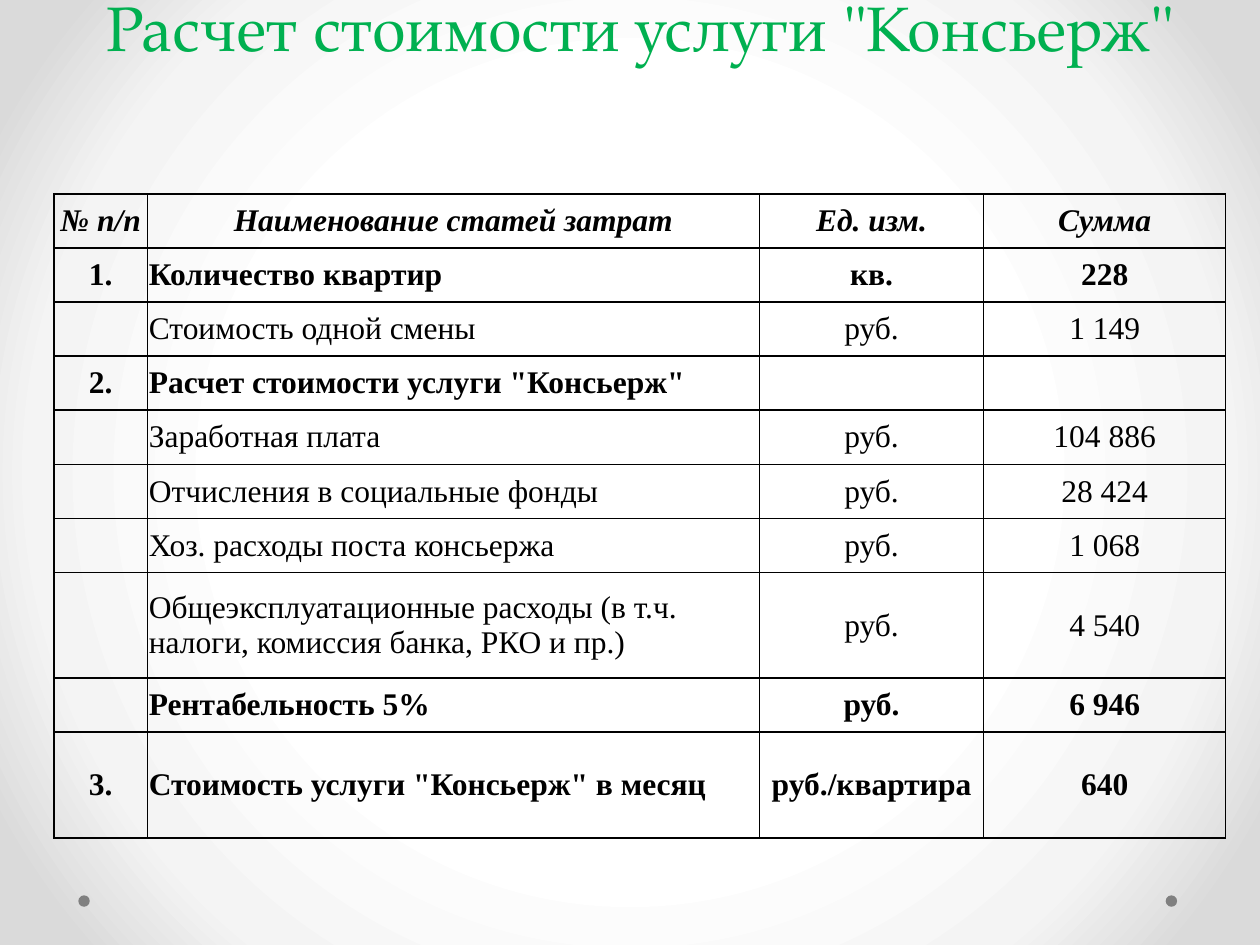
import pptx
import pptx.util
import pptx.oxml
import pptx.oxml.ns
import pptx.dml.color
import pptx.enum.text
import pptx.enum.shapes
import lxml.etree

Cm = pptx.util.Cm
Pt = pptx.util.Pt
qn = pptx.oxml.ns.qn
ALIGN = pptx.enum.text.PP_ALIGN
HUES = {"title": "00B050", "ink": "000000", "dot": "808080",
        "mid": "FFFFFF", "ring": "F4F4F4", "edge": "DADADA"}
PLAIN = "{2D5ABB26-0587-4C30-8999-92F81FD0307C}"
COLS = [1.88, 12.34, 4.52, 4.88]
LOW, TALL = 1.09, 2.13
COSTS = [
    ("№ п/п", "Наименование статей затрат", "Ед. изм.", "Сумма"),
    ("1.", "Количество квартир", "кв.", "228"),
    ("", "Стоимость одной смены", "руб.", "1 149"),
    ("2.", 'Расчет стоимости услуги "Консьерж"', "", ""),
    ("", "Заработная плата", "руб.", "104 886"),
    ("", "Отчисления в социальные фонды", "руб.", "28 424"),
    ("", "Хоз. расходы поста консьержа", "руб.", "1 068"),
    ("", "Общеэксплуатационные расходы (в т.ч. налоги, комиссия банка, РКО и пр.)",
     "руб.", "4 540"),
    ("", "Рентабельность 5%", "руб.", "6 946"),
    ("3.", 'Стоимость услуги "Консьерж" в месяц', "руб./квартира", "640"),
]
BOLD = {0, 1, 3, 8, 9}
HIGH = {7, 9}


def tint(name):
    """Return the named colour."""
    return pptx.dml.color.RGBColor.from_string(HUES[name])


def paint(slide):
    """Give the slide a round gradient background."""
    slide.background.fill.solid()
    prop = slide.element.find(".//" + qn("p:bgPr"))
    stops = "".join(
        f'<a:gs pos="{pos}000"><a:srgbClr val="{HUES[name]}"/></a:gs>'
        for pos, name in ((50, "mid"), (76, "ring"), (92, "edge")))
    grad = pptx.oxml.parse_xml(
        f'<a:gradFill {pptx.oxml.ns.nsdecls("a")} rotWithShape="1">'
        f'<a:gsLst>{stops}</a:gsLst><a:path path="circle">'
        '<a:fillToRect l="50000" t="50000" r="50000" b="50000"/>'
        '</a:path></a:gradFill>')
    prop.replace(prop.find(qn("a:solidFill")), grad)


def dots(slide, left, top, width, size):
    """Place a dot at each end of the box."""
    for x in (left, left + width - size):
        dot = slide.shapes.add_shape(pptx.enum.shapes.MSO_SHAPE.OVAL,
                                     Cm(x), Cm(top), Cm(size), Cm(size))
        dot.shadow.inherit = False
        dot.fill.solid()
        dot.fill.fore_color.rgb = tint("dot")
        dot.line.fill.background()


def table(slide, left, top, cols, rows):
    """Add an unstyled table with the given column and row sizes."""
    frame = slide.shapes.add_table(len(rows), len(cols), Cm(left), Cm(top),
                                   Cm(sum(cols)), Cm(sum(rows)))
    grid = frame.table
    grid.first_row = grid.horz_banding = False
    frame.element.find(".//" + qn("a:tableStyleId")).text = PLAIN
    for col, width in zip(grid.columns, cols):
        col.width = Cm(width)
    for row, height in zip(grid.rows, rows):
        row.height = Cm(height)
    return grid


def fill(cell, text, size, face, hue, sides, align=ALIGN.CENTER):
    """Write one clear cell and return its font."""
    cell.fill.background()
    cell.vertical_anchor = pptx.enum.text.MSO_ANCHOR.MIDDLE
    cell.margin_left = cell.margin_right = Cm(sides)
    cell.margin_top = cell.margin_bottom = 0
    para = cell.text_frame.paragraphs[0]
    para.text = text
    para.alignment = align
    font = para.runs[0].font if para.runs else para.font
    font.size, font.name = Pt(size), face
    font.color.rgb = tint(hue)
    return font


def edge(cell):
    """Draw a thin line on all four sides of the cell."""
    prop = cell._tc.get_or_add_tcPr()
    for spot, side in enumerate("LRTB"):
        line = lxml.etree.Element(qn("a:ln" + side), w=str(Pt(1)))
        solid = lxml.etree.SubElement(line, qn("a:solidFill"))
        lxml.etree.SubElement(solid, qn("a:srgbClr"), val=HUES["ink"])
        prop.insert(spot, line)


def title(slide, left, top, width):
    """Place the heading table."""
    grid = table(slide, left, top, [width], [0.66, 0.66])
    head = grid.cell(0, 0)
    fill(head, 'Расчет стоимости услуги "Консьерж"', 36,
         "TeX Gyre Pagella", "title", 0.18)
    head.text_frame.paragraphs[0].line_spacing = 0.73
    grid.cell(1, 0).fill.background()


def costs(slide, left, top):
    """Place the table of costs."""
    rows = [TALL if r in HIGH else LOW for r in range(len(COSTS))]
    grid = table(slide, left, top, COLS, rows)
    for r, row in enumerate(COSTS):
        for c, text in enumerate(row):
            cell = grid.cell(r, c)
            align = ALIGN.LEFT if c == 1 and r else ALIGN.CENTER
            font = fill(cell, text, 18, "Times New Roman", "ink", 0.03, align)
            font.bold = r in BOLD
            font.italic = r == 0
            edge(cell)


def main():
    """Build and save the slide."""
    deck = pptx.Presentation()
    deck.slide_width, deck.slide_height = Cm(25.4), Cm(19.05)
    slide = deck.slides.add_slide(deck.slide_layouts[6])
    paint(slide)
    dots(slide, 1.58, 18.05, 22.15, 0.23)
    title(slide, 0.36, 0.3, 25.1)
    costs(slide, 1.09, 3.91)
    deck.save("out.pptx")


if __name__ == "__main__":
    main()
